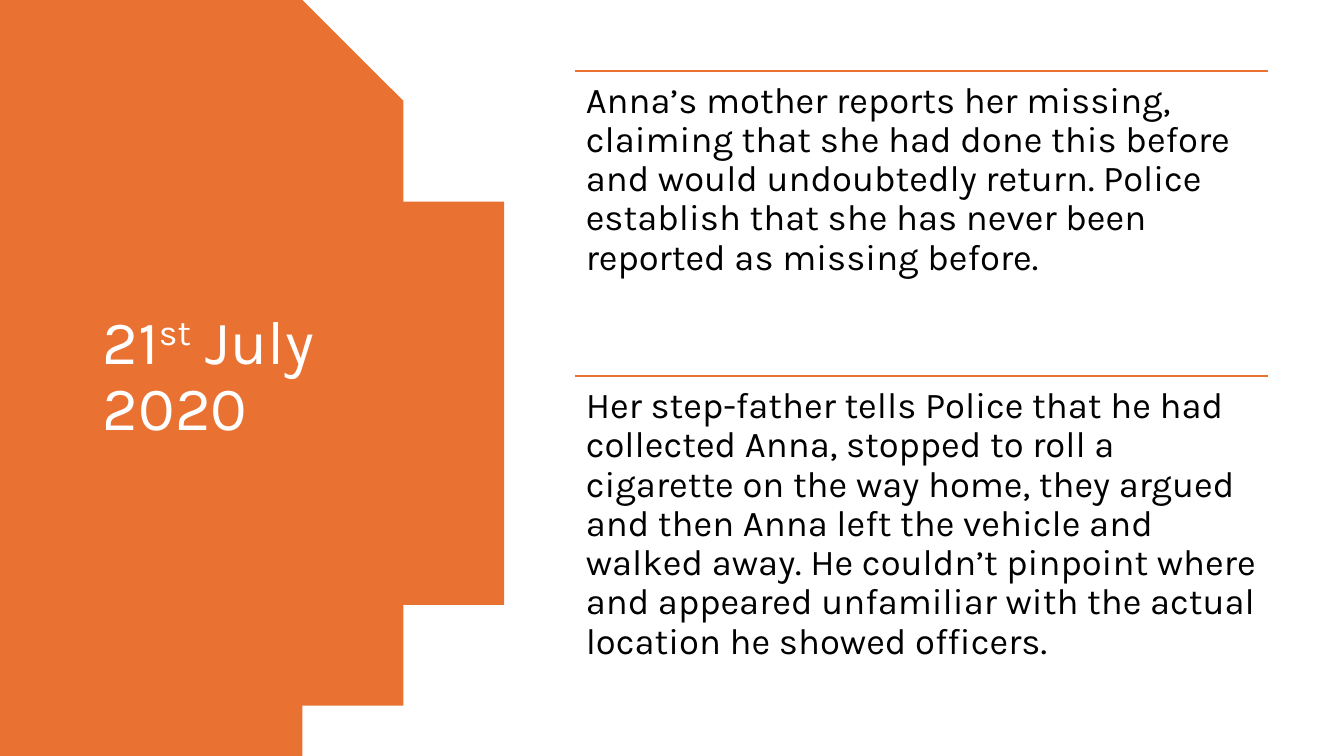
"""Build a dated slide with a round side panel and two ruled notes."""
from dataclasses import dataclass
from math import asin, cos, sin

from lxml import etree
from pptx import Presentation
from pptx import util as u
from pptx.dml.color import RGBColor
from pptx.enum import shapes, text
from pptx.oxml.ns import qn


@dataclass(frozen=True)
class Theme:
    font: str = "Karla"
    accent: RGBColor = RGBColor(0xE9, 0x71, 0x32)
    light: RGBColor = RGBColor(255, 255, 255)
    dark: RGBColor = RGBColor(0, 0, 0)
    head: float = 44
    body: float = 26
    rule: float = 1.5
    lead: float = 0.9


@dataclass(frozen=True)
class Box:
    left: float
    top: float
    width: float
    height: float

    def place(self) -> tuple[int, int, int, int]:
        return (u.Inches(self.left * WIDE), u.Inches(self.top * HIGH),
                u.Inches(self.width * WIDE), u.Inches(self.height * HIGH))


@dataclass(frozen=True)
class Note:
    row: int
    words: str


THEME = Theme()
WIDE, HIGH = 13.33, 7.5
LEFT, TOP, SPAN, ROW = 5.7 / WIDE, 0.7 / HIGH, 6.88 / WIDE, 3.03 / HIGH
TITLE = Box(0.92 / WIDE, TOP, 3.23 / WIDE, 6.09 / HIGH)
EDGE, ROUND, STEPS = 4.93, 4.4, 120
DATE = (("21", 0), ("st", 30), (" July 2020", 0))
NOTES = (
    Note(0, "Anna’s mother reports her missing, claiming that she had done this "
            "before and would undoubtedly return. Police establish that she has "
            "never been reported as missing before."),
    Note(1, "Her step-father tells Police that he had collected Anna, stopped to "
            "roll a cigarette on the way home, they argued and then Anna left the "
            "vehicle and walked away. He couldn’t pinpoint where and appeared "
            "unfamiliar with the actual location he showed officers."),
)


def write(frame, runs, *, size: float, color: RGBColor, inset: float = 0.1,
          anchor=text.MSO_ANCHOR.TOP) -> None:
    frame.word_wrap = True
    frame.auto_size = text.MSO_AUTO_SIZE.NONE
    frame.vertical_anchor = anchor
    frame.margin_left = frame.margin_right = u.Inches(inset)
    frame.margin_top = frame.margin_bottom = u.Inches(inset)
    para = frame.paragraphs[0]
    para.alignment = text.PP_ALIGN.LEFT
    para.line_spacing = THEME.lead
    for words, lift in runs:
        run = para.add_run()
        run.text = words
        run.font.name = THEME.font
        run.font.size = u.Pt(size)
        run.font.color.rgb = color
        if lift:
            run.font._element.set("baseline", str(lift * 1000))


def draw_panel(slide) -> None:
    half = asin(HIGH / 2 / ROUND)
    turns = [half * (2 * step / STEPS - 1) for step in range(STEPS + 1)]
    curve = [(EDGE - ROUND + ROUND * cos(turn), HIGH / 2 + ROUND * sin(turn))
             for turn in turns]
    outline = slide.shapes.build_freeform(0, 0, scale=u.Inches(1))
    outline.add_line_segments([*curve, (0, HIGH)], close=True)
    panel = outline.convert_to_shape()
    panel.shadow.inherit = False
    panel.fill.solid()
    panel.fill.fore_color.rgb = THEME.accent
    panel.line.fill.background()


def draw_title(slide) -> None:
    title = slide.shapes.title
    title.left, title.top, title.width, title.height = TITLE.place()
    write(title.text_frame, DATE, size=THEME.head, color=THEME.light,
          anchor=text.MSO_ANCHOR.MIDDLE)
    slide.shapes._spTree.append(title._element)


def draw_note(slide, note: Note) -> None:
    left, top, width, height = Box(LEFT, TOP + note.row * ROW, SPAN, ROW).place()
    rule = slide.shapes.add_connector(
        shapes.MSO_CONNECTOR.STRAIGHT, left, top, left + width, top)
    rule.line.color.rgb = THEME.accent
    rule.line.width = u.Pt(THEME.rule)
    etree.SubElement(rule._element.spPr, qn("a:effectLst"))
    box = slide.shapes.add_textbox(left, top, width, height)
    write(box.text_frame, [(note.words, 0)], size=THEME.body,
          color=THEME.dark, inset=0.11)


def main() -> None:
    deck = Presentation()
    deck.slide_width, deck.slide_height = u.Inches(WIDE), u.Inches(HIGH)
    slide = deck.slides.add_slide(deck.slide_layouts[5])
    draw_panel(slide)
    draw_title(slide)
    for note in NOTES:
        draw_note(slide, note)
    deck.save("out.pptx")


if __name__ == "__main__":
    main()
